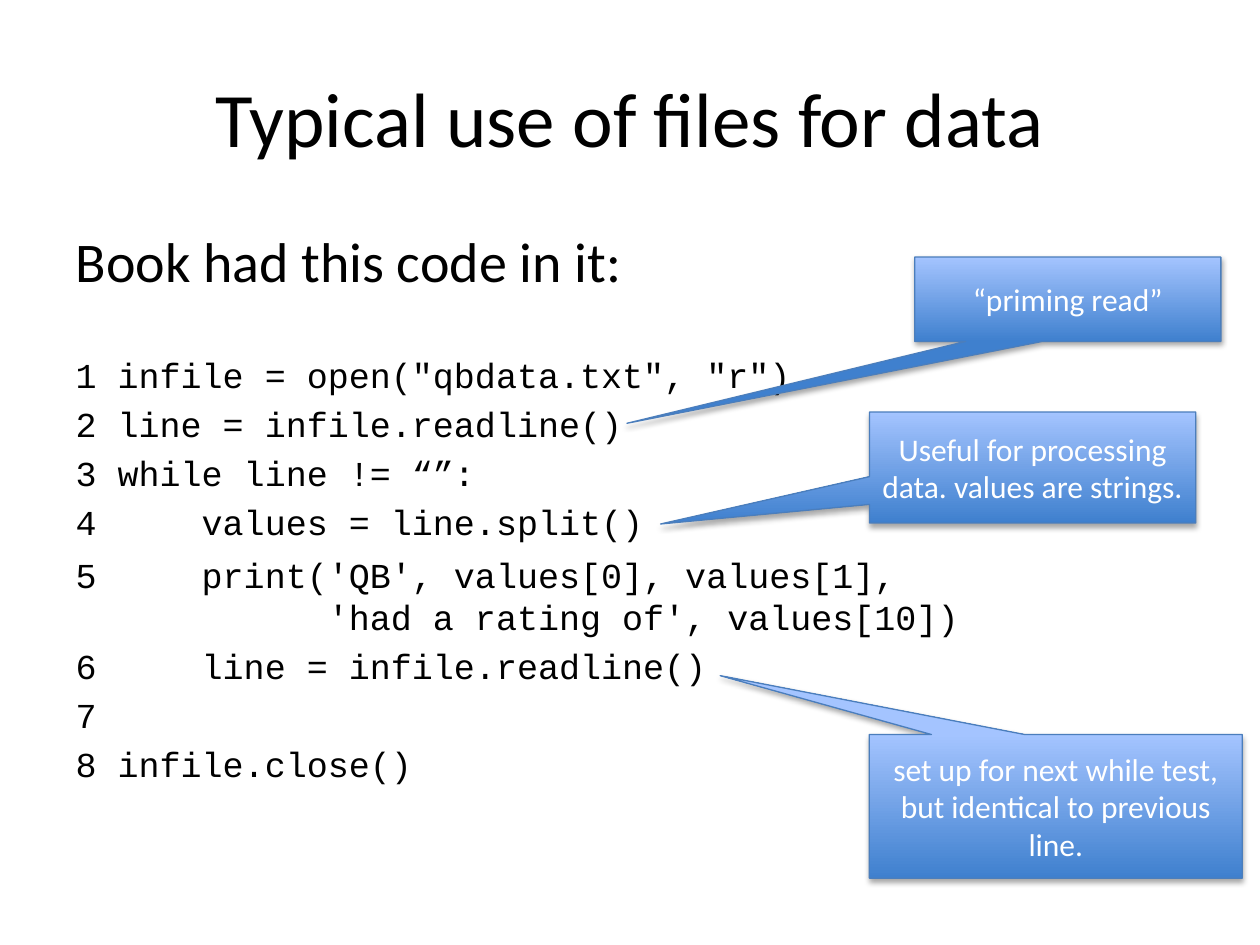
from pptx import Presentation
from pptx import util as u
from pptx.dml.color import RGBColor
from pptx.enum import shapes, text
from lxml import etree

BLACK = RGBColor(0x00, 0x00, 0x00)
WHITE = RGBColor(0xFF, 0xFF, 0xFF)
DEEP = RGBColor(0x3F, 0x80, 0xCE)
PALE = RGBColor(0xA4, 0xC4, 0xFF)
EDGE = RGBColor(0x4B, 0x7E, 0xBC)

HEAD = {"name": "Calibri", "size": u.Pt(44)}
LEAD = {"name": "Calibri", "size": u.Pt(32)}
CODE = {"name": "Courier New", "size": u.Pt(20)}
NOTE = {"name": "Calibri", "size": u.Pt(18)}

LINES = [
    '1 infile = open("qbdata.txt", "r")',
    "2 line = infile.readline()",
    "3 while line != “”:",
    "4     values = line.split()",
    "5     print('QB', values[0], values[1], \v            'had a rating of', values[10])",
    "6     line = infile.readline()",
    "7",
    "8 infile.close()",
]

# Box in grid units, pointer tip as shares of the box, wording
NOTES = [
    ((72.6, 20.4, 24.3, 6.7), (-1.44, 1.47), "“priming read”"),
    ((69, 58.3, 29.6, 11.4), (-0.9, -0.91),
     "set up for next while test, but identical to previous line."),
    ((69, 32.7, 25.9, 8.8), (-1.14, 0.51),
     "Useful for processing data. values are strings."),
]


class Deck:
    """Style and current slide, on a grid of 100 columns and 75 rows."""

    def __init__(self):
        self.prs = Presentation()
        self.prs.slide_width, self.prs.slide_height = u.Inches(10), u.Inches(7.5)
        self.unit = self.prs.slide_width / 100
        self.slide = self.prs.slides.add_slide(self.prs.slide_layouts[1])

    def grid(self, box):
        return [round(n * self.unit) for n in box]

    def place(self, shape, box):
        names = ("left", "top", "width", "height")
        for name, size in zip(names, self.grid(box)):
            setattr(shape, name, size)

    def label(self, para, words, style, color):
        para.text = words
        for run in para.runs:
            for name, value in style.items():
                setattr(run.font, name, value)
            run.font.color.rgb = color

    def title(self, words, box):
        shape = self.slide.shapes.title
        self.place(shape, box)
        frame = shape.text_frame
        frame.vertical_anchor = text.MSO_ANCHOR.MIDDLE
        para = frame.paragraphs[0]
        para.alignment = text.PP_ALIGN.CENTER
        self.label(para, words, HEAD, BLACK)

    def code(self, lead, lines, box):
        shape = self.slide.placeholders[1]
        self.place(shape, box)
        frame = shape.text_frame
        frame.auto_size = text.MSO_AUTO_SIZE.NONE
        for i, words in enumerate([lead, *lines]):
            para = frame.add_paragraph() if i else frame.paragraphs[0]
            self.label(para, words, CODE if i else LEAD, BLACK)
            props = para._p.get_or_add_pPr()
            props.set("marL", "0")
            props.set("indent", "0")
            etree.SubElement(props, props.tag.replace("pPr", "buNone"))
        frame.paragraphs[1].space_before = u.Pt(34)

    def note(self, box, tip, words):
        # The theme's soft shadow is kept
        kind = shapes.MSO_SHAPE.RECTANGULAR_CALLOUT
        shape = self.slide.shapes.add_shape(kind, *self.grid(box))
        for i, share in enumerate(tip):
            shape.adjustments[i] = share
        fill = shape.fill
        fill.gradient()
        fill.gradient_angle = 90
        for stop, color, spot in zip(fill.gradient_stops, (DEEP, PALE), (0, 1)):
            stop.color.rgb = color
            stop.position = spot
        shape.line.color.rgb = EDGE
        shape.line.width = u.Pt(0.75)
        frame = shape.text_frame
        frame.word_wrap = True
        frame.vertical_anchor = text.MSO_ANCHOR.MIDDLE
        para = frame.paragraphs[0]
        para.alignment = text.PP_ALIGN.CENTER
        self.label(para, words, NOTE, WHITE)


def main():
    deck = Deck()
    # Heading and code listing
    deck.title("Typical use of files for data", (5, 3, 90, 12.5))
    deck.code("Book had this code in it:", LINES, (5, 17.5, 90, 49.5))
    # Callouts pointing at the code
    for item in NOTES:
        deck.note(*item)
    deck.prs.save("out.pptx")


if __name__ == "__main__":
    main()
